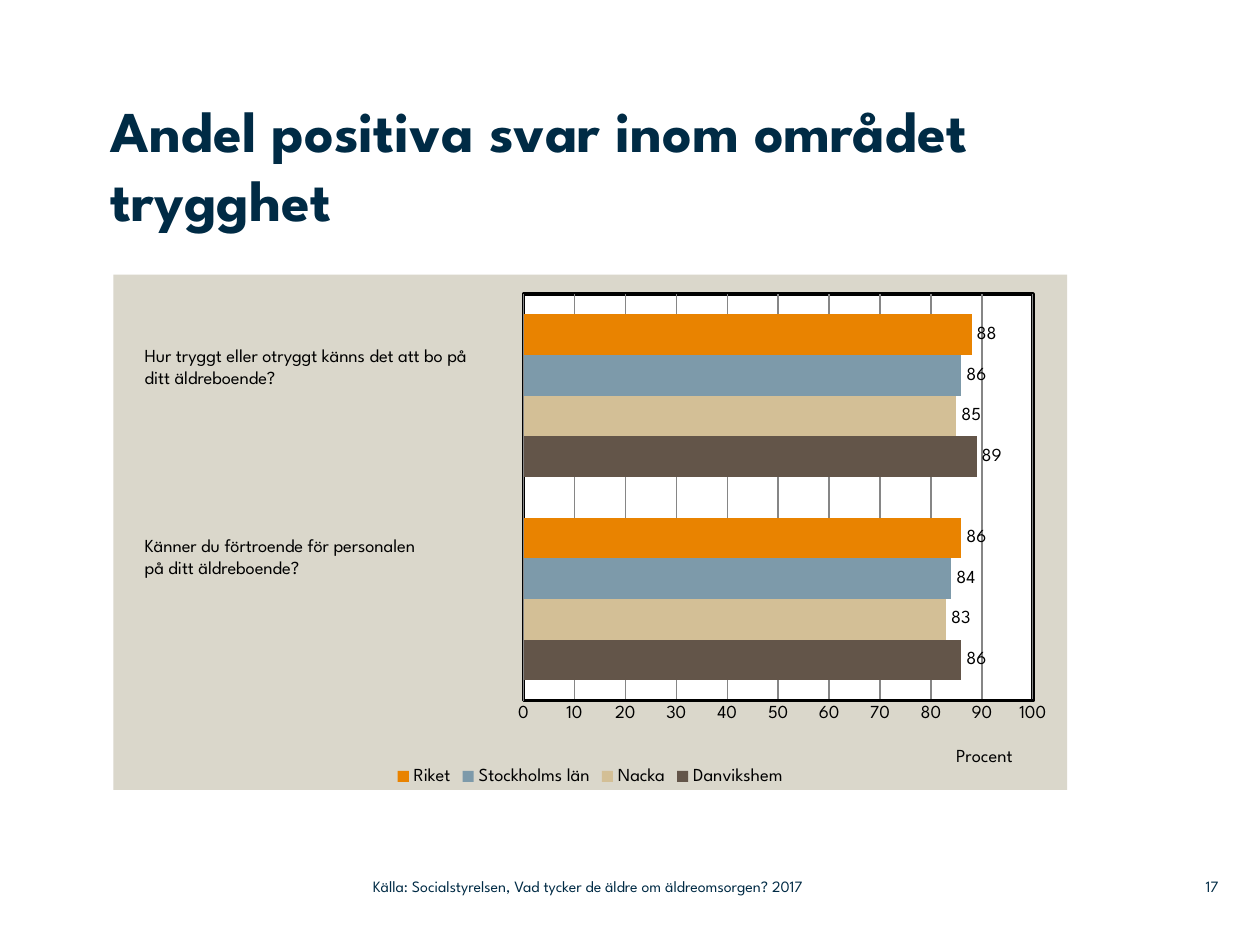
from dataclasses import dataclass

from lxml.etree import SubElement
from pptx import Presentation
from pptx.chart.data import CategoryChartData
from pptx.dml.color import RGBColor
from pptx.enum.chart import XL_CHART_TYPE, XL_LABEL_POSITION, XL_LEGEND_POSITION, XL_TICK_MARK
from pptx.enum.text import MSO_ANCHOR, PP_ALIGN
from pptx.oxml import parse_xml
from pptx.oxml.ns import nsdecls, qn
from pptx.util import Inches, Pt


@dataclass(frozen=True)
class Theme:
    font: str = "League Spartan"
    navy: str = "002B45"
    black: str = "000000"
    panel: str = "DAD7CB"
    plot: str = "FFFFFF"
    grid: str = "868686"
    title_size: float = 33
    chart_size: float = 10.5
    footer_size: float = 9


@dataclass(frozen=True)
class Label:
    lines: tuple[str, ...]
    left: float
    top: float
    width: float
    height: float
    size: float
    color: str
    inset: bool = True
    anchor: MSO_ANCHOR = MSO_ANCHOR.TOP
    align: PP_ALIGN = PP_ALIGN.LEFT


@dataclass(frozen=True)
class Region:
    name: str
    values: tuple[int, int]
    color: str


THEME = Theme()
REGIONS = (
    Region("Danvikshem", (86, 89), "635549"),
    Region("Nacka", (83, 85), "D3BF96"),
    Region("Stockholms län", (84, 86), "7D9AAA"),
    Region("Riket", (86, 88), "E98300"),
)
LABELS = (
    Label(("Hur tryggt eller otryggt känns det att bo på ditt äldreboende?",),
          1.05, 2.68, 2.94, 0.45, THEME.chart_size, THEME.black),
    Label(("Känner du förtroende för personalen", "på ditt äldreboende?"),
          1.05, 4.19, 2.93, 0.45, THEME.chart_size, THEME.black),
    Label(("17",), 9.2, 6.89, 0.47, 0.29, THEME.footer_size, THEME.navy,
          False, MSO_ANCHOR.MIDDLE, PP_ALIGN.RIGHT),
    Label(("Källa: Socialstyrelsen, Vad tycker de äldre om äldreomsorgen? 2017",),
          2.96, 6.89, 4.43, 0.29, THEME.footer_size, THEME.navy,
          False, MSO_ANCHOR.MIDDLE),
)


def style_font(font, size: float, color: str, bold: bool = False) -> None:
    font.name = THEME.font
    font.size = Pt(size)
    font.bold = bold
    font.color.rgb = RGBColor.from_string(color)


def place(shape, left: float, top: float, width: float, height: float) -> None:
    shape.left, shape.top = Inches(left), Inches(top)
    shape.width, shape.height = Inches(width), Inches(height)


def clear_insets(frame) -> None:
    frame.margin_left = frame.margin_right = 0
    frame.margin_top = frame.margin_bottom = 0


def add_title(page, text: str) -> None:
    title = page.shapes.title
    place(title, 0.88, 0.75, 7.6, 1.42)
    frame = title.text_frame
    clear_insets(frame)
    frame.word_wrap = True
    frame.vertical_anchor = MSO_ANCHOR.TOP
    para = frame.paragraphs[0]
    para.alignment = PP_ALIGN.LEFT
    span = para.add_run()
    span.text = text
    style_font(span.font, THEME.title_size, THEME.navy, True)


def add_label(page, label: Label) -> None:
    box = page.shapes.add_textbox(Inches(label.left), Inches(label.top),
                                  Inches(label.width), Inches(label.height))
    frame = box.text_frame
    frame.word_wrap = True
    frame.vertical_anchor = label.anchor
    if not label.inset:
        clear_insets(frame)
    for index, line in enumerate(label.lines):
        para = frame.add_paragraph() if index else frame.paragraphs[0]
        para.alignment = label.align
        span = para.add_run()
        span.text = line
        style_font(span.font, label.size, label.color)


def fill_area(parent, fill: str, outline: str) -> None:
    area = parse_xml(
        f'<c:spPr {nsdecls("c", "a")}><a:solidFill><a:srgbClr val="{fill}"/></a:solidFill>'
        f'{outline}</c:spPr>')
    text = parent.find(qn("c:txPr"))
    if text is None:
        parent.append(area)
    else:
        text.addprevious(area)


def set_layout(parent, **values: str | float) -> None:
    layout = parent.find(qn("c:layout"))
    if layout is None:
        layout = parent.makeelement(qn("c:layout"))
        parent.insert(0, layout)
    manual = SubElement(layout, qn("c:manualLayout"))
    for key, value in values.items():
        SubElement(manual, qn(f"c:{key}")).set("val", str(value))


def format_value_axis(axis) -> None:
    axis.minimum_scale, axis.maximum_scale, axis.major_unit = 0, 100, 10
    axis.major_tick_mark = axis.minor_tick_mark = XL_TICK_MARK.NONE
    axis.format.line.color.rgb = RGBColor.from_string(THEME.black)
    axis.format.line.width = Pt(2)
    axis.has_major_gridlines = True
    axis.major_gridlines.format.line.color.rgb = RGBColor.from_string(THEME.grid)
    axis.major_gridlines.format.line.width = Pt(0.75)
    style_font(axis.tick_labels.font, THEME.chart_size, THEME.black)
    title = axis.axis_title
    span = title.text_frame.paragraphs[0].add_run()
    span.text = "Procent"
    style_font(span.font, THEME.chart_size, THEME.black)
    text = axis._element.find(qn("c:title")).find(qn("c:tx"))
    layout = text.getparent().find(qn("c:layout"))
    if layout is None:
        layout = text.makeelement(qn("c:layout"))
        text.addnext(layout)
    set_layout(text.getparent(), xMode="edge", yMode="edge", x=0.88, y=0.91)


def add_survey_chart(page) -> None:
    data = CategoryChartData(number_format="0")
    data.categories = ["1", "2"]
    for region in REGIONS:
        data.add_series(region.name, region.values)
    chart = page.shapes.add_chart(XL_CHART_TYPE.BAR_CLUSTERED, Inches(0.9), Inches(2.18),
                                  Inches(7.57), Inches(4.09), data).chart
    style_font(chart.font, THEME.chart_size, THEME.black)
    chart.has_title = False
    chart.has_legend = True
    chart.legend.position = XL_LEGEND_POSITION.BOTTOM
    chart.legend.include_in_layout = False
    style_font(chart.legend.font, THEME.chart_size, THEME.black)
    chart.category_axis.visible = False
    format_value_axis(chart.value_axis)
    plot = chart.plots[0]
    plot.gap_width, plot.overlap = 100, 0
    plot.vary_by_categories = False
    for series, region in zip(plot.series, REGIONS):
        series.format.fill.solid()
        series.format.fill.fore_color.rgb = RGBColor.from_string(region.color)
        labels = series.data_labels
        labels.show_value = True
        labels.position = XL_LABEL_POSITION.OUTSIDE_END
        style_font(labels.font, THEME.chart_size, THEME.black)
    area = chart._chartSpace.find(qn("c:chart")).find(qn("c:plotArea"))
    set_layout(area, layoutTarget="inner", xMode="edge", yMode="edge",
               x=0.43, y=0.038, w=0.534, h=0.789)
    fill_area(area, THEME.plot, f'<a:ln w="{Pt(2)}"><a:solidFill>'
              f'<a:srgbClr val="{THEME.black}"/></a:solidFill></a:ln>')
    fill_area(chart._chartSpace, THEME.panel, "<a:ln><a:noFill/></a:ln>")


def main() -> None:
    deck = Presentation()
    deck.slide_width, deck.slide_height = Inches(10), Inches(7.5)
    page = deck.slides.add_slide(deck.slide_layouts[5])
    add_survey_chart(page)
    add_title(page, "Andel positiva svar inom området trygghet")
    for label in LABELS:
        add_label(page, label)
    deck.save("out.pptx")


if __name__ == "__main__":
    main()
